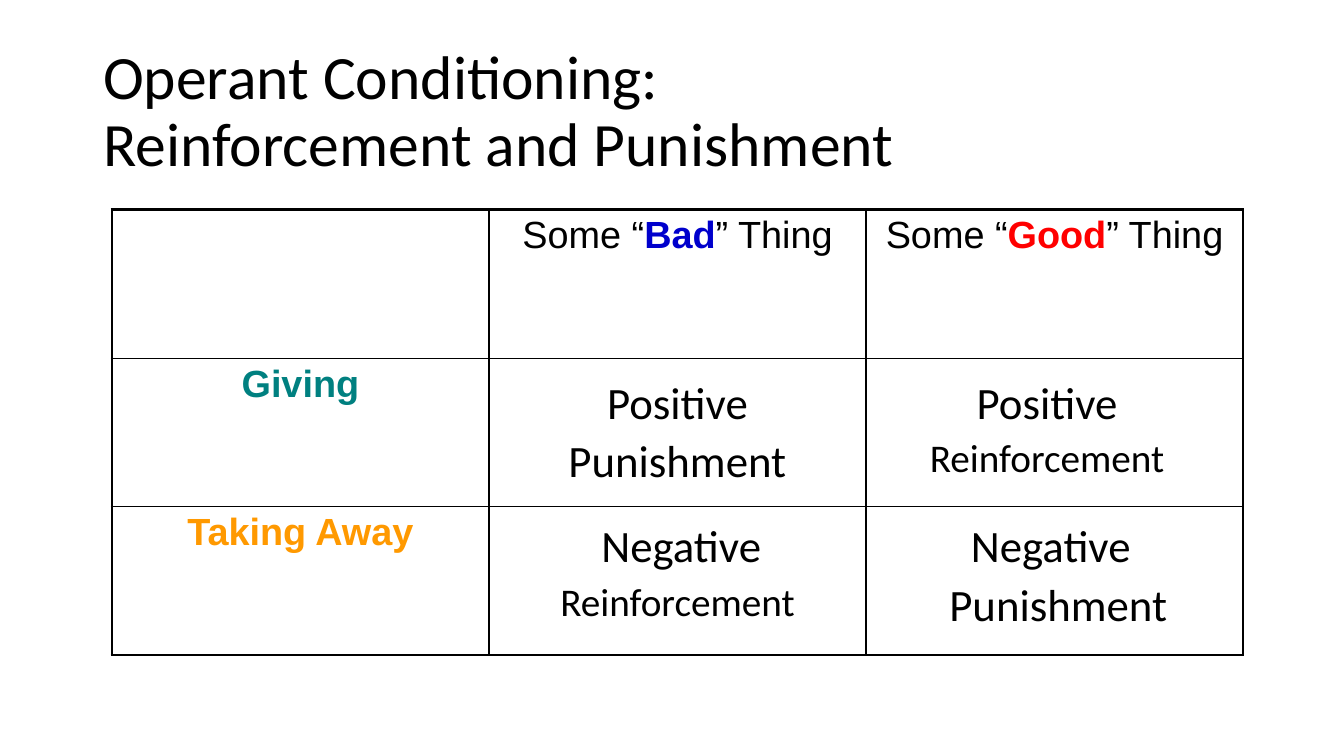
from lxml.etree import SubElement
from pptx import Presentation
from pptx.dml.color import RGBColor as RGB
from pptx.enum.text import MSO_ANCHOR as Anchor, MSO_AUTO_SIZE as Fit, PP_ALIGN as Align
from pptx.oxml import parse_xml
from pptx.oxml.ns import nsdecls
from pptx.util import Inches, Pt

BLACK, BLUE, RED, TEAL, AMBER = "000000", "0000CC", "FF0000", "008080", "FF9900"
THICK, THIN = 2.25, 1

HEADS = [
    [[], [("Some “", BLACK, False), ("Bad", BLUE, True), ("” Thing", BLACK, False)],
     [("Some “", BLACK, False), ("Good", RED, True), ("” Thing", BLACK, False)]],
    [[("Giving", TEAL, True)], [], []],
    [[("Taking Away", AMBER, True)], [], []],
]

# Word, size in points, column and row on the grid
LABELS = [
    ("Positive", 32, 1.01, 1.08),
    ("Positive", 32, 1.99, 1.08),
    ("Negative", 32, 1.02, 2.04),
    ("Negative", 32, 2, 2.04),
    ("Punishment", 32, 1.01, 1.47),
    ("Reinforcement", 28, 1.99, 1.47),
    ("Punishment", 32, 2.02, 2.44),
    ("Reinforcement", 28, 1.01, 2.44),
]


def paint(font, color):
    font.color.rgb = RGB.from_string(color)


class Board:
    """Draws on a slide whose grid is the table: (0, 0) is its top left cell."""

    left, top, col, row = 1.11, 2.08, 3.74, 1.473
    face, head = "Calibri", "Arial"

    def __init__(self, slide):
        self.slide = slide

    def area(self, x, y, w, h):
        """Turn columns and rows into left, top, width and height."""
        return (Inches(self.left + x * self.col), Inches(self.top + y * self.row),
                Inches(w * self.col), Inches(h * self.row))

    def style(self, para, size, face, align):
        para.alignment = align
        para.font.size, para.font.name = Pt(size), face

    def title(self, text, *area):
        shape = self.slide.shapes.title
        shape.left, shape.top, shape.width, shape.height = self.area(*area)
        frame = shape.text_frame
        frame.text = text
        frame.vertical_anchor = Anchor.MIDDLE
        para = frame.paragraphs[0]
        self.style(para, 44, self.face, Align.LEFT)
        para.line_spacing = 0.9
        paint(para.font, BLACK)

    def edge(self, cell, sides):
        """Set the border widths, given in the order left, right, top, bottom."""
        props = cell._tc.get_or_add_tcPr()
        for at, (side, width) in enumerate(zip("LRTB", sides)):
            line = parse_xml(f'<a:ln{side} {nsdecls("a")} w="{Pt(width)}"><a:solidFill>'
                             f'<a:srgbClr val="{BLACK}"/></a:solidFill></a:ln{side}>')
            props.insert(at, line)

    def cell(self, cell, runs):
        cell.fill.background()
        cell.margin_left = cell.margin_right = Inches(0.13)
        cell.margin_top = cell.margin_bottom = Inches(0.05)
        para = cell.text_frame.paragraphs[0]
        self.style(para, 27, self.head, Align.CENTER)
        for text, color, bold in runs:
            run = para.add_run()
            run.text, run.font.bold = text, bold
            paint(run.font, color)

    def table(self, rows):
        down, wide = len(rows), len(rows[0])
        table = self.slide.shapes.add_table(down, wide, *self.area(0, 0, wide, down)).table
        table.first_row = table.horz_banding = False
        for r, row in enumerate(rows):
            for c, runs in enumerate(row):
                cell = table.cell(r, c)
                self.cell(cell, runs)
                outer = (c == 0, c == wide - 1, r == 0, r == down - 1)
                self.edge(cell, [THICK if out else THIN for out in outer])

    def label(self, text, size, x, y):
        high = 0.43 if size == 32 else 0.39
        frame = self.slide.shapes.add_textbox(*self.area(x, y, 0.98, high)).text_frame
        frame.word_wrap, frame.auto_size = True, Fit.SHAPE_TO_FIT_TEXT
        frame.text = text
        para = frame.paragraphs[0]
        self.style(para, size, self.face, Align.CENTER)
        paint(para.font, BLACK)


def main():
    deck = Presentation()
    deck.slide_width, deck.slide_height = Inches(13.33), Inches(7.5)
    board = Board(deck.slides.add_slide(deck.slide_layouts[5]))
    board.title("Operant Conditioning:\vReinforcement and Punishment", -0.05, -1.14, 3.07, 0.98)
    board.table(HEADS)
    for label in LABELS:
        board.label(*label)
    deck.save("out.pptx")


if __name__ == "__main__":
    main()
